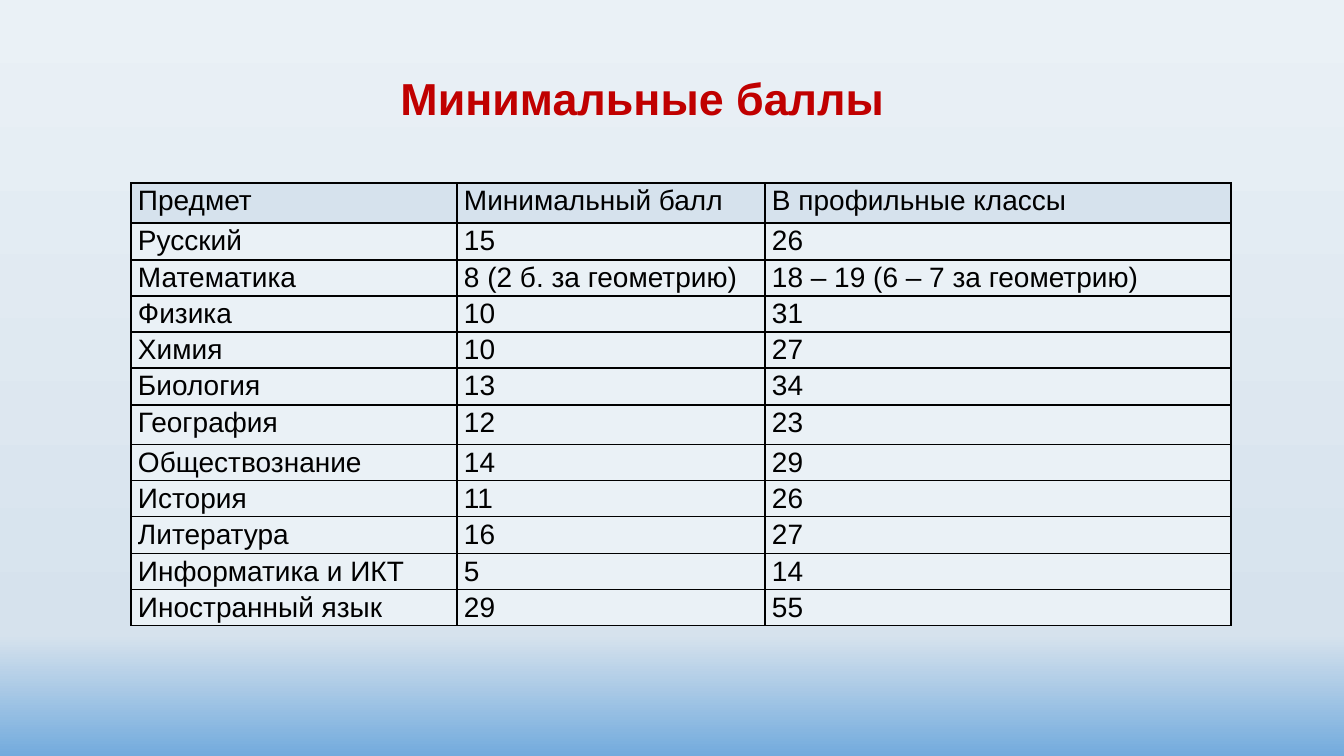
from copy import deepcopy

from pptx import Presentation
from pptx.dml.color import RGBColor
from pptx.enum.text import MSO_AUTO_SIZE, PP_ALIGN
from pptx.oxml import parse_xml
from pptx.oxml.ns import nsdecls
from pptx.util import Pt

PX = 914400 / 100.8


def px(length):
    return round(length * PX)


def color(hex_value):
    return RGBColor.from_string(hex_value)


prs = Presentation()
prs.slide_width, prs.slide_height = px(1344), px(756)
slide = prs.slides.add_slide(prs.slide_layouts[6])

# Background: vertical gradient with three stops
sky = slide.background.fill
sky.gradient()
sky.gradient_angle = 270
stop_list = slide.element.xpath(".//a:gsLst")[0]
stop_list.append(deepcopy(stop_list[-1]))
sky_stops = [(0, "EAF1F6"), (0.84, "D6E2ED"), (1, "73ABDD")]
for stop, (position, shade) in zip(sky.gradient_stops, sky_stops):
    stop.position = position
    stop.color.rgb = color(shade)

# Score table
scores = [
    ("Предмет", "Минимальный балл", "В профильные классы"),
    ("Русский", "15", "26"),
    ("Математика", "8 (2 б. за геометрию)", "18 – 19 (6 – 7 за геометрию)"),
    ("Физика", "10", "31"),
    ("Химия", "10", "27"),
    ("Биология", "13", "34"),
    ("География", "12", "23"),
    ("Обществознание", "14", "29"),
    ("История", "11", "26"),
    ("Литература", "16", "27"),
    ("Информатика и ИКТ", "5", "14"),
    ("Иностранный язык", "29", "55"),
]
column_widths = [326, 308, 466]
row_heights = [40, 37, 36, 36, 36, 37, 40, 36, 36, 37, 36, 36]

table = slide.shapes.add_table(
    len(scores), len(column_widths), px(131), px(183),
    px(sum(column_widths)), px(sum(row_heights))).table
for column, width in zip(table.columns, column_widths):
    column.width = px(width)

for r, (subject_scores, height) in enumerate(zip(scores, row_heights)):
    table.rows[r].height = px(height)
    for c, text in enumerate(subject_scores):
        cell = table.cell(r, c)
        cell.margin_left = cell.margin_right = px(7)
        cell.margin_top = cell.margin_bottom = 0
        # Borders go before the fill in the cell properties
        cell_props = cell._tc.get_or_add_tcPr()
        for side in "LRTB":
            cell_props.append(parse_xml(
                f'<a:ln{side} {nsdecls("a")} w="{Pt(1)}"><a:solidFill>'
                f'<a:srgbClr val="000000"/></a:solidFill></a:ln{side}>'))
        cell.fill.solid()
        cell.fill.fore_color.rgb = color("D6E2ED" if r == 0 else "EAF1F6")
        paragraph = cell.text_frame.paragraphs[0]
        paragraph.line_spacing = 1.07
        paragraph.space_after = Pt(8)
        run = paragraph.add_run()
        run.text = text
        run.font.name, run.font.size, run.font.bold = "Arial", Pt(20), False
        run.font.color.rgb = color("000000")

# Title
title = slide.shapes.add_textbox(px(76), px(66), px(1133), px(64)).text_frame
title.word_wrap = True
title.auto_size = MSO_AUTO_SIZE.SHAPE_TO_FIT_TEXT
title.paragraphs[0].alignment = PP_ALIGN.CENTER
heading = title.paragraphs[0].add_run()
heading.text = "Минимальные баллы"
heading.font.name, heading.font.size, heading.font.bold = "Arial", Pt(32), True
heading.font.color.rgb = color("C00000")

prs.save("out.pptx")
